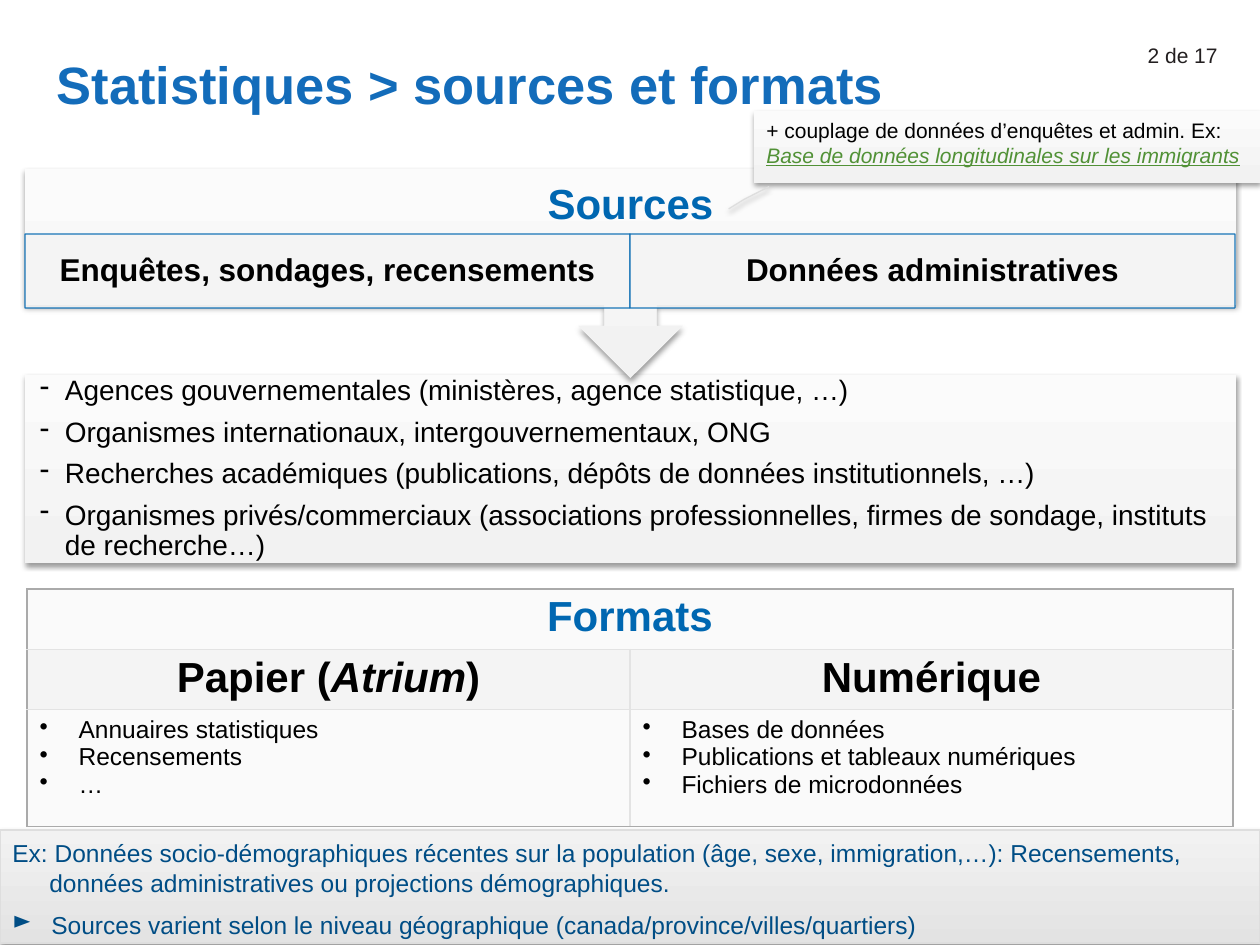
"""Build the slide on sources and formats of statistics."""
from lxml.etree import SubElement as Sub
from pptx import Presentation
from pptx.dml.color import RGBColor
from pptx.enum.shapes import MSO_SHAPE as Kind
from pptx.enum.text import MSO_ANCHOR as Anchor, PP_ALIGN as Align
from pptx.oxml.ns import qn
from pptx.util import Pt

SCALE = 914400 / 126
BLACK = RGBColor(0x00, 0x00, 0x00)
INK = RGBColor(0x23, 0x1F, 0x20)
TITLE = RGBColor(0x13, 0x6C, 0xBA)
BLUE = RGBColor(0x00, 0x67, 0xB1)
NAVY = RGBColor(0x00, 0x4D, 0x85)
GREEN = RGBColor(0x51, 0x91, 0x36)
PALE = RGBColor(0xFA, 0xFA, 0xFA)
GREY = RGBColor(0xF4, 0xF4, 0xF4)
EDGE = RGBColor(0xDE, 0xDE, 0xDE)
OUTER = RGBColor(0xAA, 0xAA, 0xAA)
INNER = RGBColor(0xE3, 0xE3, 0xE3)
LIGHT = (RGBColor(0xF2, 0xF2, 0xF2), RGBColor(0xFB, 0xFB, 0xFB))
DARK = (INNER, LIGHT[0])

AGENCIES = [
    "Agences gouvernementales (ministères, agence statistique, …)",
    "Organismes internationaux, intergouvernementaux, ONG",
    "Recherches académiques (publications, dépôts de données institutionnels, …)",
    "Organismes privés/commerciaux (associations professionnelles, "
    "firmes de sondage, instituts de recherche…)",
]
FOOTER = [
    "Ex: Données socio-démographiques récentes sur la population (âge, sexe, "
    "immigration,…): Recensements, données administratives ou projections démographiques.",
    "Sources varient selon le niveau géographique (canada/province/villes/quartiers)",
]
PAPER = ["Annuaires statistiques", "Recensements", "…"]
DIGITAL = ["Bases de données", "Publications et tableaux numériques", "Fichiers de microdonnées"]


def px(*vals):
    """Turn px lengths into EMU."""
    return [round(val * SCALE) for val in vals]


def indent(par, gap, mark=None):
    """Hang a paragraph by a gap, with an optional bullet mark."""
    props = par._p.get_or_add_pPr()
    [size] = px(gap)
    props.set("marL", str(size))
    props.set("indent", str(-size))
    if mark:
        Sub(props, qn("a:buChar")).set("char", mark)


def write(frame, lines, size, color, bold=False, align=Align.LEFT, space=1.0):
    """Fill a text frame with evenly styled paragraphs."""
    frame.word_wrap = True
    frame.text = "\n".join(lines)
    for par in frame.paragraphs:
        par.alignment = align
        par.line_spacing = space
        for run in par.runs:
            style(run, size, color, bold)
    return frame.paragraphs


def style(run, size, color, bold=False):
    """Set the font of one run."""
    font = run.font
    font.name, font.size, font.bold = "Arial", Pt(size), bold
    font.color.rgb = color


def label(slide, box, text, size, color, bold, align):
    """Add a one-line text box, centred upright."""
    frame = slide.shapes.add_textbox(*px(*box)).text_frame
    frame.vertical_anchor = Anchor.MIDDLE
    write(frame, [text], size, color, bold, align, 0.9)


def panel(slide, kind, box, tones, edge=None, angle=90):
    """Add a shape with a gradient and a soft shadow."""
    shape = slide.shapes.add_shape(kind, *px(*box))
    shape.fill.gradient()
    shape.fill.gradient_angle = angle
    for stop, tone in zip(shape.fill.gradient_stops, tones):
        stop.color.rgb = tone
    if edge:
        shape.line.color.rgb = edge
        shape.line.width = Pt(0.75)
    else:
        shape.line.fill.background()
    shape.shadow.inherit = False
    effects = shape._element.spPr.find(qn("a:effectLst"))
    cast = Sub(effects, qn("a:outerShdw"), blurRad="40000", dist="20000",
               dir="5400000", rotWithShape="0")
    tint = Sub(cast, qn("a:srgbClr"), val="000000")
    Sub(tint, qn("a:alpha"), val="38000")
    shape.text_frame.vertical_anchor = Anchor.TOP
    return shape


def source(slide, box, text):
    """Add a slightly see-through box naming a kind of source."""
    shape = slide.shapes.add_shape(Kind.RECTANGLE, *px(*box))
    shape.fill.solid()
    shape.fill.fore_color.rgb = GREY
    shape.line.color.rgb = BLUE
    shape.line.width = Pt(0.75)
    shape.shadow.inherit = False
    for tint in shape._element.spPr.iter(qn("a:srgbClr")):
        Sub(tint, qn("a:alpha"), val="90000")
    shape.text_frame.vertical_anchor = Anchor.MIDDLE
    write(shape.text_frame, [text], 18, BLACK, True, Align.CENTER, 0.9)


def paint(cell, fill, row, col):
    """Fill a cell and draw its outer and inner borders."""
    props = cell._tc.get_or_add_tcPr()
    rims = {"L": col == 0, "R": col == 1 or row == 0, "T": row == 0, "B": row == 2}
    for side, rim in rims.items():
        line = Sub(props, qn(f"a:ln{side}"), w="12700")
        Sub(Sub(line, qn("a:solidFill")), qn("a:srgbClr"), val=str(OUTER if rim else INNER))
    cell.fill.solid()
    cell.fill.fore_color.rgb = fill


def formats(slide):
    """Add the table of formats."""
    table = slide.shapes.add_table(3, 2, *px(27, 589, 1206, 236)).table
    table.first_row = table.horz_banding = False
    for row, high in zip(table.rows, px(59, 60, 117)):
        row.height = high
    table.cell(0, 0).merge(table.cell(0, 1))
    for row, fill in enumerate((PALE, GREY, PALE)):
        for col in range(2):
            paint(table.cell(row, col), fill, row, col)
    heads = [(0, 0, "Formats", BLUE), (1, 0, "Papier (", BLACK), (1, 1, "Numérique", BLACK)]
    for row, col, text, color in heads:
        cell = table.cell(row, col)
        cell.margin_top, cell.margin_bottom = px(5, 5)
        write(cell.text_frame, [text], 24, color, True, Align.CENTER)
    par = table.cell(1, 0).text_frame.paragraphs[0]
    for text, slant in (("Atrium", True), (")", False)):
        run = par.add_run()
        run.text = text
        style(run, 24, BLACK, True)
        run.font.italic = slant
    for col, lines in enumerate((PAPER, DIGITAL)):
        for par in write(table.cell(2, col).text_frame, lines, 14, BLACK):
            indent(par, 39, "•")


def aside(slide):
    """Add the callout on linked data."""
    shape = panel(slide, Kind.LINE_CALLOUT_2_NO_BORDER, (754, 111, 506, 72), LIGHT, EDGE)
    for spot, val in enumerate((1.05, 0.03, 1.23, -0.02, 1.36, -0.05)):
        shape.adjustments[spot] = val
    [par] = write(shape.text_frame, ["+ couplage de données d’enquêtes et admin. Ex: "], 12, BLACK)
    run = par.add_run()
    run.text = "Base de données longitudinales sur les immigrants"
    style(run, 12, GREEN)
    run.font.italic = run.font.underline = True


def main():
    """Build and save the slide."""
    deck = Presentation()
    deck.slide_width, deck.slide_height = px(1260, 945)
    slide = deck.slides.add_slide(deck.slide_layouts[5])
    title = slide.shapes.title
    title.left, title.top, title.width, title.height = px(44, 16, 883, 106)
    title.text_frame.vertical_anchor = Anchor.BOTTOM
    write(title.text_frame, ["Statistiques > sources et formats"], 30, TITLE, True, space=0.85)
    label(slide, (936, 32, 294, 50), "2 de 17", 12, INK, False, Align.RIGHT)

    frame = panel(slide, Kind.RECTANGLE, (25, 375, 1211, 188), LIGHT).text_frame
    frame.vertical_anchor = Anchor.MIDDLE
    frame.margin_left, frame.margin_right = px(15, 15)
    pars = write(frame, AGENCIES, 16, BLACK, space=0.9)
    for par in pars:
        indent(par, 25, "-")
    for par in pars[:-1]:
        par.space_after = Pt(6.4)

    arrow = panel(slide, Kind.UP_ARROW_CALLOUT, (25, 169, 1211, 209), LIGHT, angle=270)
    arrow.rotation = 180
    label(slide, (25, 169, 1211, 73), "Sources", 24, BLUE, True, Align.CENTER)
    for col, text in enumerate(("Enquêtes, sondages, recensements", "Données administratives")):
        source(slide, (25 + 605 * col, 234, 605, 74), text)
    formats(slide)
    aside(slide)

    foot = panel(slide, Kind.RECTANGLE, (0, 830, 1260, 113), DARK, EDGE)
    first, last = write(foot.text_frame, FOOTER, 14, NAVY, space=1.05)
    indent(first, 37)
    indent(last, 39, "►")
    last.space_before = Pt(6)
    deck.save("out.pptx")


if __name__ == "__main__":
    main()
